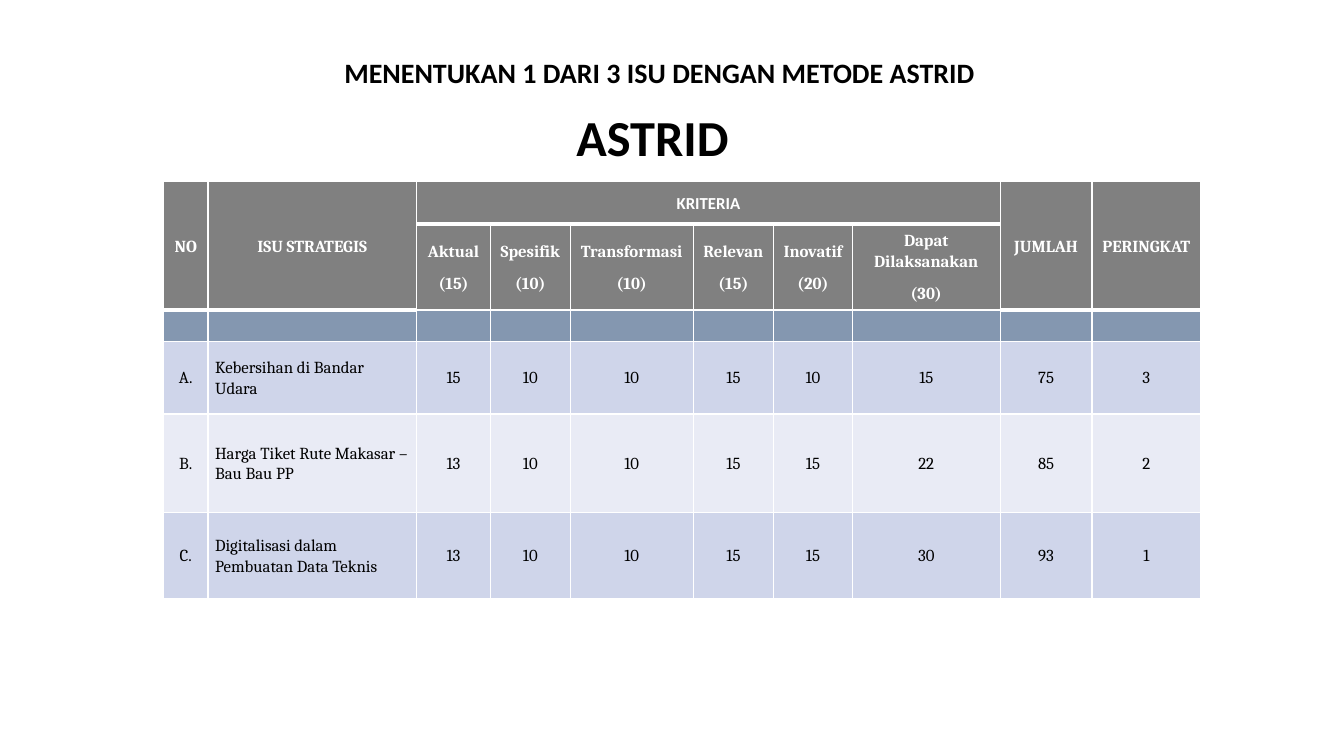
from dataclasses import dataclass

from lxml import etree
from pptx import Presentation
from pptx.dml.color import RGBColor
from pptx.enum.text import MSO_ANCHOR, PP_ALIGN
from pptx.oxml.ns import qn
from pptx.util import Cm, Pt

LEFT, MID = PP_ALIGN.LEFT, PP_ALIGN.CENTER
TOP, CENTER = MSO_ANCHOR.TOP, MSO_ANCHOR.MIDDLE


@dataclass(frozen=True)
class Theme:
    black: str = "000000"
    white: str = "FFFFFF"
    head: str = "808080"
    band: str = "8497B0"
    dark: str = "CFD5EA"
    light: str = "E9EBF5"
    sans: str = "Calibri"
    serif: str = "Cambria"
    title: int = 36
    lead: int = 20
    body: int = 12
    thin: int = 1
    thick: int = 3


@dataclass(frozen=True)
class Title:
    text: str
    left: float
    top: float
    size: int


@dataclass(frozen=True)
class Issue:
    mark: str
    name: str
    scores: tuple[int, ...]
    rank: int
    fill: str


THEME = Theme()
TITLES = (
    Title("MENENTUKAN 1 DARI 3 ISU DENGAN METODE ASTRID", 1.55, 1.37, THEME.lead),
    Title("ASTRID", 1.37, 2.72, THEME.title),
)
WIDTHS = (1.12, 5.26, 1.86, 2.01, 3.1, 2.03, 1.98, 3.73, 2.31, 2.74)
HEIGHTS = (1.07, 2.16, 0.79, 1.83, 2.49, 2.16)
HEADS = {0: "NO", 1: "ISU STRATEGIS", 8: "JUMLAH", 9: "PERINGKAT"}
TESTS = (
    ("Aktual", 15), ("Spesifik", 10), ("Transformasi", 10),
    ("Relevan", 15), ("Inovatif", 20), ("Dapat Dilaksanakan", 30),
)
FIRST, LAST = 2, 7  # columns of the criteria
ISSUES = (
    Issue("A.", "Kebersihan di Bandar Udara", (15, 10, 10, 15, 10, 15), 3, THEME.dark),
    Issue("B.", "Harga Tiket Rute Makasar – Bau Bau PP", (13, 10, 10, 15, 15, 22), 2, THEME.light),
    Issue("C.", "Digitalisasi dalam Pembuatan Data Teknis", (13, 10, 10, 15, 15, 30), 1, THEME.dark),
)


def write(frame, text: str, *, size: int = THEME.body, font: str = THEME.serif,
          color: str = THEME.black, bold: bool = False, align=MID,
          line: float = 1.07, after: int = 8) -> None:
    """Fill a text frame, one paragraph per line of text."""
    for n, part in enumerate(text.split("\n")):
        para = frame.add_paragraph() if n else frame.paragraphs[0]
        para.alignment, para.line_spacing = align, line
        para.space_after = Pt(after)
        run = para.add_run()
        run.text = part
        run.font.size, run.font.name, run.font.bold = Pt(size), font, bold
        run.font.color.rgb = RGBColor.from_string(color)


def add_title(slide, item: Title) -> None:
    box = slide.shapes.add_textbox(Cm(item.left), Cm(item.top), Cm(30.15), Cm(1.83))
    frame = box.text_frame
    frame.word_wrap, frame.vertical_anchor = True, TOP
    write(frame, item.text, size=item.size, font=THEME.sans, bold=True, line=0.9, after=0)


def edge(row: int, col: int) -> int:
    """Weight of the rule above a cell: thick below each top heading."""
    end = 1 if FIRST <= col <= LAST else 2
    return THEME.thick if row == end else THEME.thin


def style(cell, row: int, col: int, fill: str) -> None:
    cell.margin_left = cell.margin_right = Cm(0.18)
    cell.margin_top = cell.margin_bottom = 0
    cell.vertical_anchor = CENTER
    props = cell._tc.get_or_add_tcPr()
    rules = {
        "L": THEME.thin, "R": THEME.thin,
        "T": edge(row, col), "B": edge(row + cell.span_height, col),
    }
    for side, width in rules.items():
        rule = etree.SubElement(props, qn(f"a:ln{side}"), w=str(Pt(width)))
        paint = etree.SubElement(rule, qn("a:solidFill"))
        etree.SubElement(paint, qn("a:srgbClr"), val=THEME.white)
    cell.fill.solid()
    cell.fill.fore_color.rgb = RGBColor.from_string(fill)


def add_grid(slide) -> None:
    grid = slide.shapes.add_table(
        len(HEIGHTS), len(WIDTHS), Cm(4.12), Cm(4.58),
        Cm(sum(WIDTHS)), Cm(sum(HEIGHTS))).table
    grid.horz_banding = False
    for col, width in zip(grid.columns, WIDTHS):
        col.width = Cm(width)
    for row, height in zip(grid.rows, HEIGHTS):
        row.height = Cm(height)

    # Merged headings, then fills and rules
    for col in HEADS:
        grid.cell(0, col).merge(grid.cell(1, col))
    grid.cell(0, FIRST).merge(grid.cell(0, LAST))
    fills = (THEME.head, THEME.head, THEME.band, *(i.fill for i in ISSUES))
    for r, fill in enumerate(fills):
        for c in range(len(WIDTHS)):
            style(grid.cell(r, c), r, c, fill)

    # Heading text
    look = {"color": THEME.white, "bold": True}
    for col, text in HEADS.items():
        write(grid.cell(0, col).text_frame, text, **look)
    write(grid.cell(0, FIRST).text_frame, "KRITERIA", font=THEME.sans, **look)
    for col, (name, top) in enumerate(TESTS, FIRST):
        write(grid.cell(1, col).text_frame, f"{name}\n({top})", **look)

    # Scores, with their sums
    for r, item in enumerate(ISSUES, 3):
        row = (item.mark, item.name, *item.scores, sum(item.scores), item.rank)
        for c, value in enumerate(row):
            write(grid.cell(r, c).text_frame, str(value), align=LEFT if c == 1 else MID)


def main() -> None:
    deck = Presentation()
    deck.slide_width, deck.slide_height = Cm(33.87), Cm(19.05)
    slide = deck.slides.add_slide(deck.slide_layouts[6])
    add_grid(slide)
    for item in TITLES:
        add_title(slide, item)
    deck.save("out.pptx")


if __name__ == "__main__":
    main()
